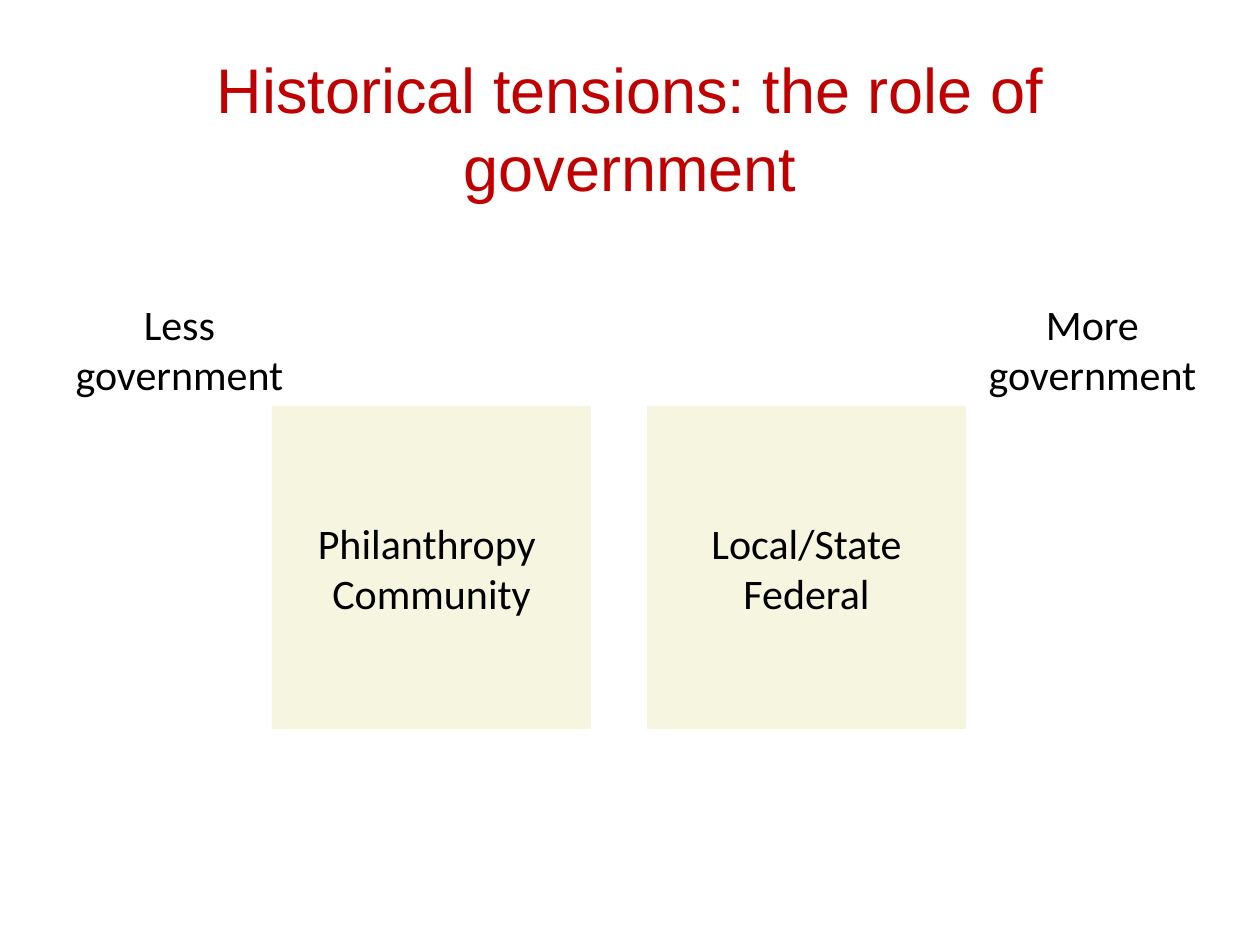
from dataclasses import dataclass

from lxml import etree
from pptx import Presentation, util as u
from pptx.dml.color import RGBColor
from pptx.enum import shapes, text
from pptx.oxml.ns import qn

PX_PER_INCH = 126
TITLE_RED = RGBColor(0xC0, 0x00, 0x00)
BLACK = RGBColor(0x00, 0x00, 0x00)
OLIVE = RGBColor(0xBC, 0xB2, 0x00)
OLIVE_ALPHA = 12


@dataclass(frozen=True)
class Block:
    lines: tuple[str, ...]
    left: int
    top: int
    width: int
    height: int

    def bounds(self) -> tuple[u.Emu, ...]:
        return tuple(px(n) for n in (self.left, self.top, self.width, self.height))


def px(length: int) -> u.Emu:
    return u.Emu(round(length * u.Inches(1) / PX_PER_INCH))


def write(frame, lines, *, size=24, font="Calibri", color=BLACK,
          anchor=text.MSO_ANCHOR.TOP, spacing=None) -> None:
    frame.word_wrap = True
    frame.vertical_anchor = anchor
    for index, line in enumerate(lines):
        paragraph = frame.paragraphs[0] if index == 0 else frame.add_paragraph()
        paragraph.alignment = text.PP_ALIGN.CENTER
        paragraph.line_spacing = spacing
        run = paragraph.add_run()
        run.text = line
        run.font.size = u.Pt(size)
        run.font.name = font
        run.font.color.rgb = color


def draw_label(slide, label: Block, **style) -> None:
    write(slide.shapes.add_textbox(*label.bounds()).text_frame, label.lines, **style)


def draw_sector(slide, sector: Block) -> None:
    panel = slide.shapes.add_shape(shapes.MSO_SHAPE.RECTANGLE, *sector.bounds())
    panel.shadow.inherit = False
    panel.line.fill.background()
    panel.fill.solid()
    panel.fill.fore_color.rgb = OLIVE
    tint = panel._element.spPr.find(qn("a:solidFill")).find(qn("a:srgbClr"))
    etree.SubElement(tint, qn("a:alpha"), val=str(OLIVE_ALPHA * 1000))
    write(panel.text_frame, sector.lines, anchor=text.MSO_ANCHOR.MIDDLE)


TITLE = Block(("Historical tensions: the role of government",), 63, 41, 1134, 157)
SECTORS = (
    Block(("Philanthropy ", "Community"), 272, 406, 319, 323),
    Block(("Local/State", "Federal"), 647, 406, 319, 323),
)
POSITIONS = (
    Block(("Less", "government"), 53, 292, 253, 115),
    Block(("More", "government"), 966, 292, 253, 115),
)


def main() -> None:
    deck = Presentation()
    deck.slide_width, deck.slide_height = u.Inches(10), u.Inches(7.5)
    slide = deck.slides.add_slide(deck.slide_layouts[6])
    draw_label(slide, TITLE, size=36, font="Arial", color=TITLE_RED, spacing=1.04)
    for sector in SECTORS:
        draw_sector(slide, sector)
    for position in POSITIONS:
        draw_label(slide, position)
    deck.save("out.pptx")


if __name__ == "__main__":
    main()
